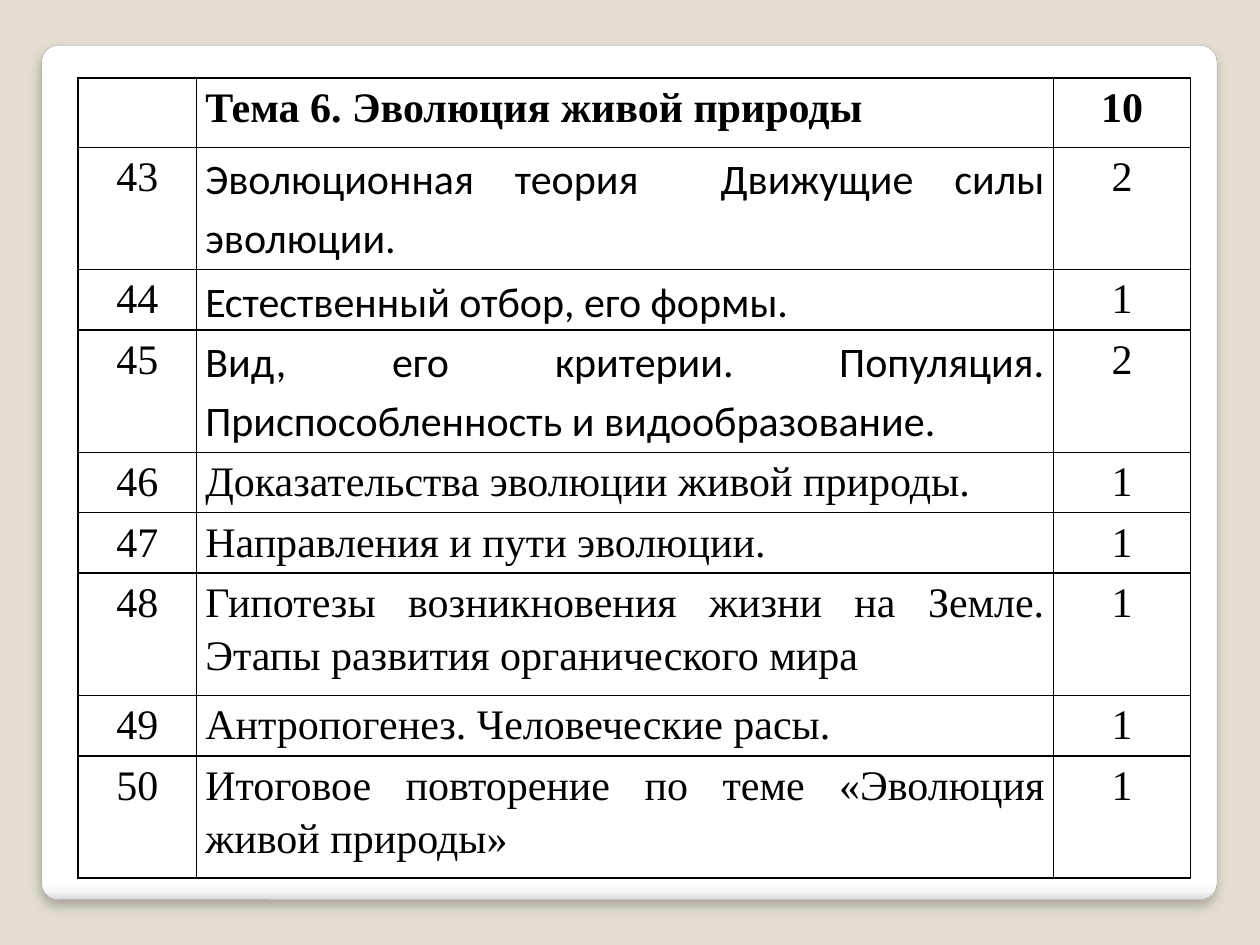
from dataclasses import dataclass

from lxml.etree import SubElement
from pptx import Presentation
from pptx.dml.color import RGBColor as Color
from pptx.enum.shapes import MSO_SHAPE as Shape
from pptx.enum.text import PP_ALIGN as Align
from pptx.oxml.ns import qn
from pptx.slide import Slide
from pptx.table import _Cell as Cell
from pptx.util import Inches, Pt


@dataclass(frozen=True)
class Theme:
    background: str = "E3DED1"
    ink: str = "000000"
    panel_line: str = "A4A4A4"
    panel_stops: tuple = ((0, "FFFFFF"), (98, "FFFFFF"), (99, "F7F7F7"), (100, "DADADA"))
    serif: str = "Times New Roman"
    sans: str = "Calibri"
    text_size: int = 24
    line_spacing: float = 1.15


@dataclass(frozen=True)
class Lesson:
    number: str
    topic: str
    hours: str
    height: float = 0.48
    topic_font: str = Theme.serif
    bold: bool = False


THEME = Theme()
TWO_LINES = 0.97
COLUMN_WIDTHS = (0.94, 6.8, 1.09)
LESSONS = (
    Lesson("", "Тема 6. Эволюция живой природы", "10", 0.55, bold=True),
    Lesson("43", "Эволюционная теория  Движущие силы эволюции.", "2", TWO_LINES, THEME.sans),
    Lesson("44", "Естественный отбор, его формы.", "1", topic_font=THEME.sans),
    Lesson("45", "Вид, его критерии. Популяция. Приспособленность и видообразование.", "2",
           TWO_LINES, THEME.sans),
    Lesson("46", "Доказательства эволюции живой природы.", "1"),
    Lesson("47", "Направления и пути эволюции.", "1"),
    Lesson("48", "Гипотезы возникновения жизни на Земле. Этапы развития органического мира", "1",
           TWO_LINES),
    Lesson("49", "Антропогенез. Человеческие расы.", "1"),
    Lesson("50", "Итоговое повторение по теме «Эволюция живой природы»", "1", TWO_LINES),
)


def add_color(parent, value: str):
    return SubElement(parent, qn("a:srgbClr"), val=value)


def add_panel(slide: Slide) -> None:
    """Rounded white panel with a shaded lower edge and a soft shadow."""
    panel = slide.shapes.add_shape(
        Shape.ROUNDED_RECTANGLE, Inches(0.33), Inches(0.36), Inches(9.33), Inches(6.78))
    panel.adjustments[0] = 0.02
    panel.line.color.rgb = Color.from_string(THEME.panel_line)
    panel.line.width = Pt(0.16)

    panel.fill.gradient()
    panel.fill.gradient_angle = 270
    properties = panel.element.spPr
    stops = properties.find(".//" + qn("a:gsLst"))
    for stop in list(stops):
        stops.remove(stop)
    for percent, color in THEME.panel_stops:
        add_color(SubElement(stops, qn("a:gs"), pos=str(percent * 1000)), color)

    panel.shadow.inherit = False
    shadow = SubElement(
        properties.find(qn("a:effectLst")), qn("a:outerShdw"),
        blurRad=str(Pt(6)), dist=str(Pt(4)), dir="5400000", algn="t", rotWithShape="0")
    SubElement(add_color(shadow, THEME.ink), qn("a:alpha"), val="25000")


def add_borders(cell: Cell) -> None:
    properties = cell._tc.get_or_add_tcPr()
    for index, side in enumerate(("lnL", "lnR", "lnT", "lnB")):
        line = properties.makeelement(qn(f"a:{side}"), {"w": str(Pt(1))})
        add_color(SubElement(line, qn("a:solidFill")), THEME.ink)
        properties.insert(index, line)


def fill_cell(cell: Cell, text: str, align: Align, font_name: str, bold: bool) -> None:
    cell.margin_left = cell.margin_right = Inches(0.07)
    cell.margin_top = cell.margin_bottom = 0
    cell.fill.background()
    add_borders(cell)
    if not text:
        return
    para = cell.text_frame.paragraphs[0]
    para.text = text
    para.alignment = align
    para.line_spacing = THEME.line_spacing
    para.font.name = font_name
    para.font.size = Pt(THEME.text_size)
    para.font.bold = bold
    para.font.color.rgb = Color.from_string(THEME.ink)


def add_lesson_table(slide: Slide) -> None:
    table = slide.shapes.add_table(
        len(LESSONS), len(COLUMN_WIDTHS), Inches(0.62), Inches(0.62),
        Inches(sum(COLUMN_WIDTHS)), Inches(sum(lesson.height for lesson in LESSONS))).table
    table.first_row = table.horz_banding = False
    for column, width in zip(table.columns, COLUMN_WIDTHS):
        column.width = Inches(width)
    for row, lesson in zip(table.rows, LESSONS):
        row.height = Inches(lesson.height)
        number, topic, hours = row.cells
        fill_cell(number, lesson.number, Align.CENTER, THEME.serif, lesson.bold)
        fill_cell(topic, lesson.topic, Align.JUSTIFY, lesson.topic_font, lesson.bold)
        fill_cell(hours, lesson.hours, Align.CENTER, THEME.serif, lesson.bold)


def main() -> None:
    deck = Presentation()
    deck.slide_width, deck.slide_height = Inches(10), Inches(7.5)
    # The slide has no title, so it uses the blank layout
    slide = deck.slides.add_slide(deck.slide_layouts.get_by_name("Blank"))
    slide.background.fill.solid()
    slide.background.fill.fore_color.rgb = Color.from_string(THEME.background)
    add_panel(slide)
    add_lesson_table(slide)
    deck.save("out.pptx")


if __name__ == "__main__":
    main()
